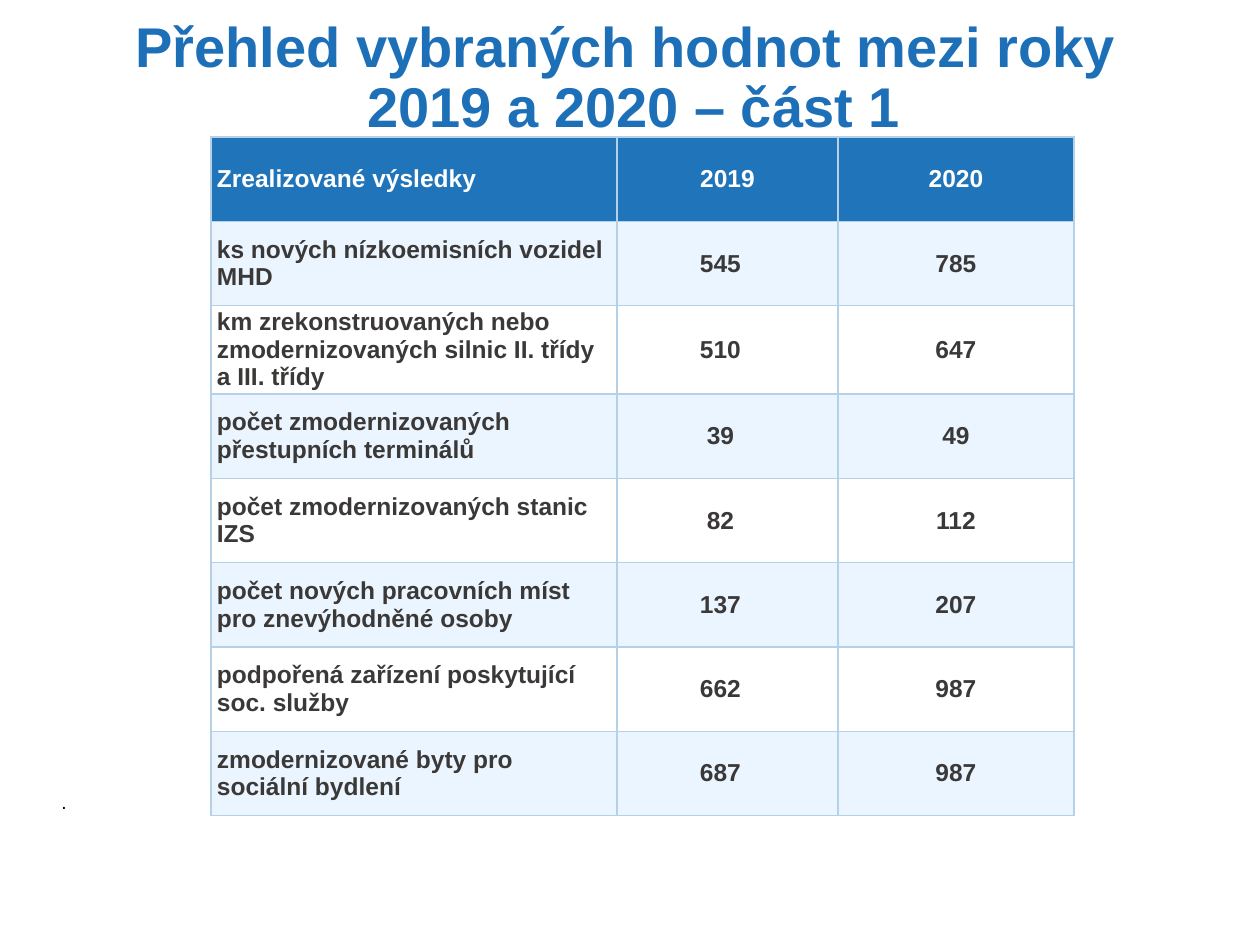
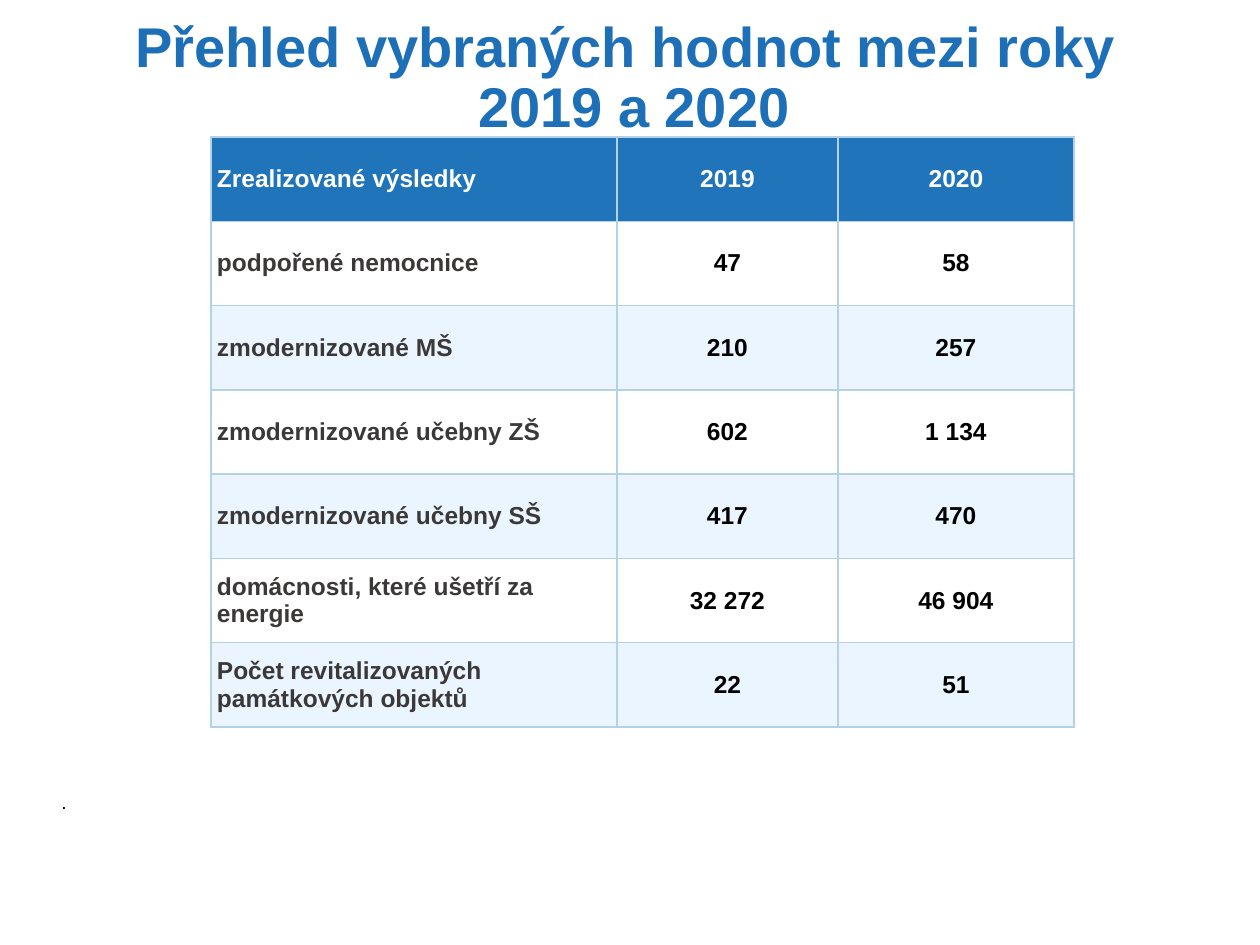
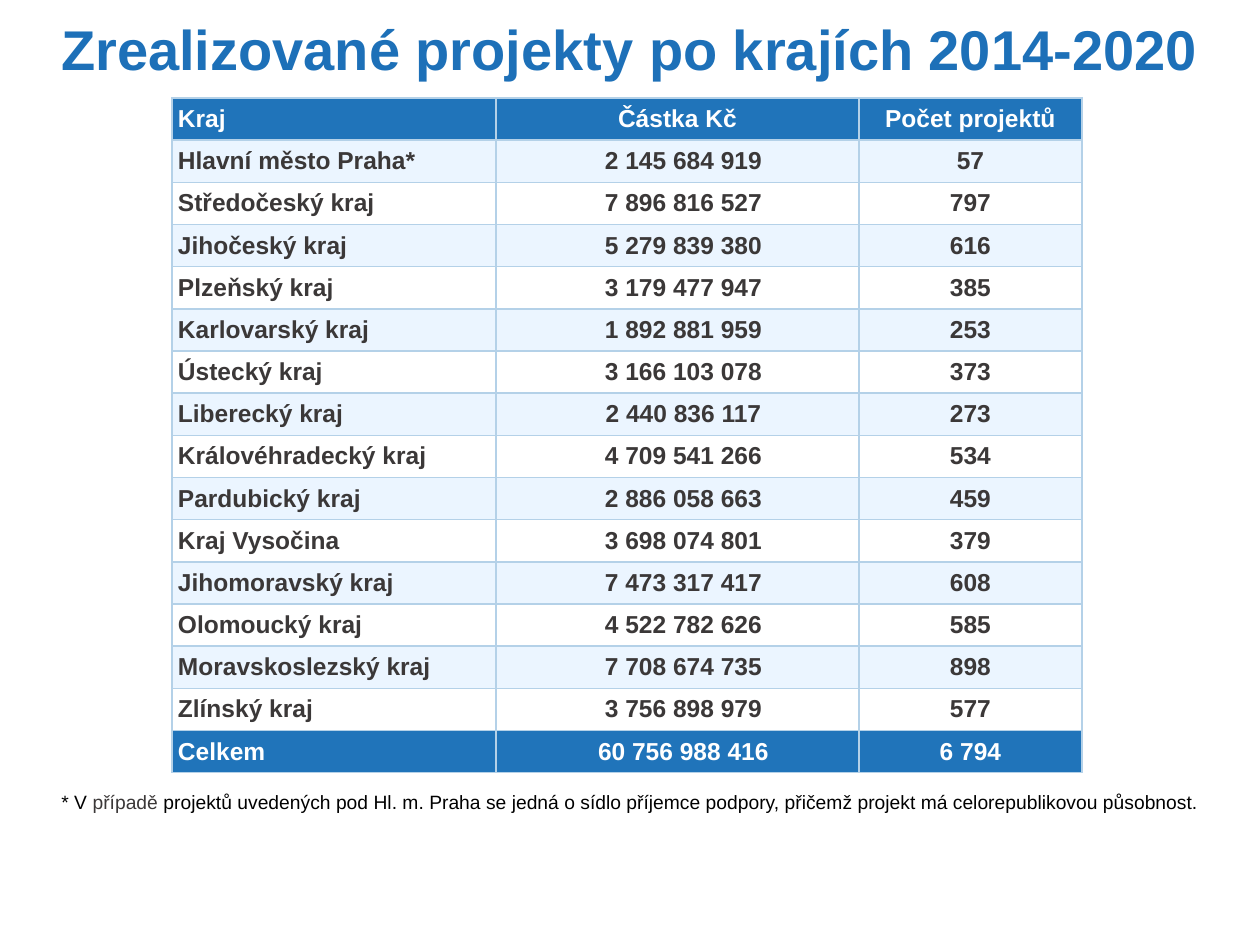
from dataclasses import dataclass

from lxml import etree
from pptx import Presentation
from pptx.dml.color import RGBColor
from pptx.enum.text import MSO_ANCHOR, PP_ALIGN
from pptx.oxml.ns import qn
from pptx.util import Pt

LEFT, CENTER = PP_ALIGN.LEFT, PP_ALIGN.CENTER
TOP, MIDDLE, BOTTOM = MSO_ANCHOR.TOP, MSO_ANCHOR.MIDDLE, MSO_ANCHOR.BOTTOM

# Shared look
EMU_PER_PX = 914400 / 126
PAGE_WIDTH, PAGE_HEIGHT = 1260, 945
CELL_INSET = 6
FONT_NAME = "Arial"
COLORS = {
    "title": "1D70B8", "band": "2074BA", "tint": "EBF5FF", "white": "FFFFFF",
    "border": "B4D1E8", "dark": "3B3838", "black": "000000",
}
TITLE_FORMAT = {"name": FONT_NAME, "size": Pt(32), "bold": True}
TABLE_FORMAT = {"name": FONT_NAME, "size": Pt(14), "bold": True}
NOTE_FORMAT = {"name": FONT_NAME, "size": Pt(11), "bold": False}


@dataclass(frozen=True)
class Area:
    left: int
    top: int
    width: int
    height: int


@dataclass(frozen=True)
class Span:
    text: str
    color: str = "black"


@dataclass(frozen=True)
class ValueTable:
    left: int
    top: int
    height: int
    columns: tuple[int, ...]
    rows: list[tuple[str, str, str]]
    stripes: tuple[str, str] = ("tint", "white")
    number_color: str = "dark"
    first_number_shift: int = 0
    has_total: bool = False


@dataclass(frozen=True)
class Page:
    title: str
    title_area: Area
    note: list[Span]
    table: ValueTable


NOTE_AREA = Area(49, 784, 1168, 37)
TWO_LINE_TITLE = Area(4, 15, 1260, 131)
RESULT_GRID = {"left": 211, "top": 137, "columns": (406, 221, 236)}
RESULT_HEADER = ("Zrealizované výsledky", "2019", "2020")

PAGES = [
    Page(
        "Přehled vybraných hodnot mezi roky \v2019 a 2020 – část 1",
        TWO_LINE_TITLE,
        [Span(".")],
        ValueTable(
            **RESULT_GRID, height=675, first_number_shift=-7,
            rows=[
                RESULT_HEADER,
                ("ks nových nízkoemisních vozidel MHD", "545", "785"),
                ("km zrekonstruovaných nebo zmodernizovaných silnic "
                 "II. třídy a III. třídy", "510", "647"),
                ("počet zmodernizovaných přestupních terminálů", "39", "49"),
                ("počet zmodernizovaných stanic IZS", "82", "112"),
                ("počet nových pracovních míst pro znevýhodněné osoby",
                 "137", "207"),
                ("podpořená zařízení poskytující soc. služby", "662", "987"),
                ("zmodernizované byty pro sociální bydlení", "687", "987"),
            ],
        ),
    ),
    Page(
        "Přehled vybraných hodnot mezi roky \v2019 a 2020",
        TWO_LINE_TITLE,
        [Span(".")],
        ValueTable(
            **RESULT_GRID, height=590, stripes=("white", "tint"),
            number_color="black",
            rows=[
                RESULT_HEADER,
                ("podpořené nemocnice", "47", "58"),
                ("zmodernizované MŠ", "210", "257"),
                ("zmodernizované učebny ZŠ", "602", "1 134"),
                ("zmodernizované učebny SŠ", "417", "470"),
                ("domácnosti, které ušetří za energie", "32 272", "46 904"),
                ("Počet revitalizovaných památkových objektů", "22", "51"),
            ],
        ),
    ),
    Page(
        "Zrealizované projekty po krajích 2014-2020",
        Area(0, -20, 1260, 109),
        [
            Span("* V "),
            Span("případě", "dark"),
            Span(" projektů uvedených pod Hl. m. Praha se jedná o sídlo příjemce "
                 "podpory, přičemž projekt má celorepublikovou působnost."),
        ],
        ValueTable(
            left=172, top=98, height=675, columns=(324, 363, 223),
            first_number_shift=6, has_total=True,
            rows=[
                ("Kraj", "Částka Kč", "Počet projektů"),
                ("Hlavní město Praha*", "2 145 684 919", "57"),
                ("Středočeský kraj", "7 896 816 527", "797"),
                ("Jihočeský kraj", "5 279 839 380", "616"),
                ("Plzeňský kraj", "3 179 477 947", "385"),
                ("Karlovarský kraj", "1 892 881 959", "253"),
                ("Ústecký kraj", "3 166 103 078", "373"),
                ("Liberecký kraj", "2 440 836 117", "273"),
                ("Královéhradecký kraj", "4 709 541 266", "534"),
                ("Pardubický kraj", "2 886 058 663", "459"),
                ("Kraj Vysočina", "3 698 074 801", "379"),
                ("Jihomoravský kraj", "7 473 317 417", "608"),
                ("Olomoucký kraj", "4 522 782 626", "585"),
                ("Moravskoslezský kraj", "7 708 674 735", "898"),
                ("Zlínský kraj", "3 756 898 979", "577"),
                ("Celkem", "60 756 988 416", "6 794"),
            ],
        ),
    ),
]


def px(length: float) -> int:
    return round(length * EMU_PER_PX)


def set_font(font, values: dict, color: str) -> None:
    for name, value in values.items():
        setattr(font, name, value)
    font.color.rgb = RGBColor.from_string(COLORS[color])


def add_box(slide, area: Area, anchor=TOP):
    box = slide.shapes.add_textbox(
        px(area.left), px(area.top), px(area.width), px(area.height))
    box.text_frame.word_wrap = True
    box.text_frame.vertical_anchor = anchor
    return box.text_frame


def draw_title(slide, page: Page) -> None:
    para = add_box(slide, page.title_area, BOTTOM).paragraphs[0]
    para.text = page.title
    para.alignment = CENTER
    para.line_spacing = 0.9
    for run in para.runs:
        set_font(run.font, TITLE_FORMAT, "title")


def draw_note(slide, spans: list[Span]) -> None:
    para = add_box(slide, NOTE_AREA).paragraphs[0]
    for span in spans:
        run = para.add_run()
        run.text = span.text
        set_font(run.font, NOTE_FORMAT, span.color)


def add_borders(cell) -> None:
    properties = cell._tc.get_or_add_tcPr()
    # Border elements must precede the cell fill
    for position, side in enumerate(("a:lnL", "a:lnR", "a:lnT", "a:lnB")):
        line = etree.Element(qn(side), w=str(Pt(1)))
        fill = etree.SubElement(line, qn("a:solidFill"))
        etree.SubElement(fill, qn("a:srgbClr"), val=COLORS["border"])
        properties.insert(position, line)


def draw_cell(cell, text: str, fill: str, color: str, align, shift: int) -> None:
    cell.fill.solid()
    cell.fill.fore_color.rgb = RGBColor.from_string(COLORS[fill])
    add_borders(cell)
    values = {
        "vertical_anchor": MIDDLE, "margin_top": 0, "margin_bottom": 0,
        "margin_left": px(CELL_INSET + 2 * max(shift, 0)),
        "margin_right": px(CELL_INSET + 2 * max(-shift, 0)),
    }
    for name, value in values.items():
        setattr(cell, name, value)
    para = cell.text_frame.paragraphs[0]
    para.alignment = align
    run = para.add_run()
    run.text = text
    set_font(run.font, TABLE_FORMAT, color)


def draw_table(slide, content: ValueTable) -> None:
    row_count = len(content.rows)
    table = slide.shapes.add_table(
        row_count, len(content.columns), px(content.left), px(content.top),
        px(sum(content.columns)), px(content.height)).table
    table.horz_banding = False
    for column, width in zip(table.columns, content.columns):
        column.width = px(width)
    for row in table.rows:
        row.height = px(content.height / row_count)

    for row_index, texts in enumerate(content.rows):
        is_header = row_index == 0
        is_total = content.has_total and row_index == row_count - 1
        is_band = is_header or is_total
        fill = "band" if is_band else content.stripes[(row_index - 1) % 2]
        for column_index, text in enumerate(texts):
            is_label = column_index == 0
            body_color = "dark" if is_label else content.number_color
            is_shifted = column_index == 1 and not is_header
            draw_cell(
                table.cell(row_index, column_index), text, fill,
                "white" if is_band else body_color,
                LEFT if is_label else CENTER,
                content.first_number_shift if is_shifted else 0)


def main() -> None:
    deck = Presentation()
    deck.slide_width, deck.slide_height = px(PAGE_WIDTH), px(PAGE_HEIGHT)
    blank_layout = deck.slide_layouts[6]
    for page in PAGES:
        slide = deck.slides.add_slide(blank_layout)
        draw_title(slide, page)
        draw_note(slide, page.note)
        draw_table(slide, page.table)
    deck.save("out.pptx")


if __name__ == "__main__":
    main()
